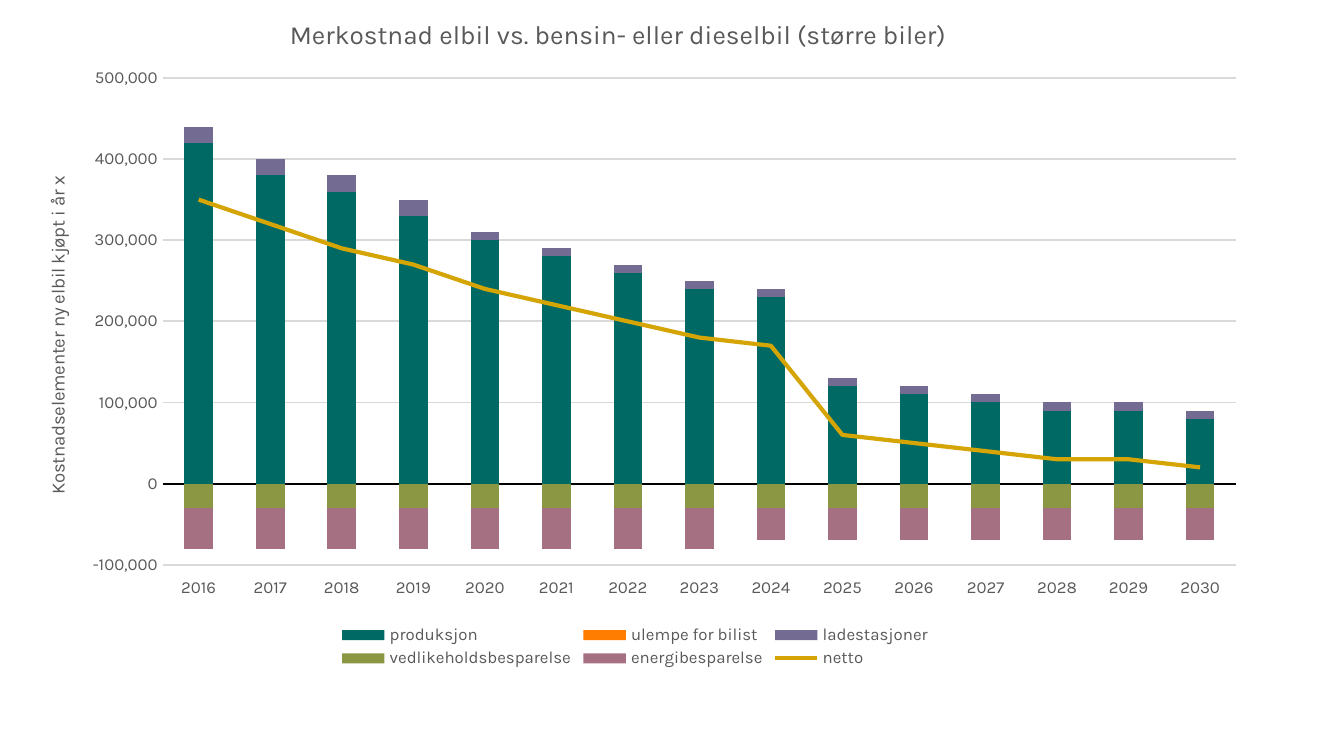
from lxml import etree
from pptx import Presentation
from pptx.chart.data import CategoryChartData
from pptx.dml.color import RGBColor
from pptx.enum.chart import XL_CHART_TYPE, XL_LEGEND_POSITION, XL_TICK_LABEL_POSITION, XL_TICK_MARK
from pptx.enum.text import MSO_ANCHOR, MSO_AUTO_SIZE, PP_ALIGN
from pptx.oxml.ns import qn
from pptx.util import Emu, Pt

EMU_PER_PX = 914400 / 134.4
FONT = "Karla"
GRAY = RGBColor(0x59, 0x59, 0x59)
BLACK = RGBColor(0x00, 0x00, 0x00)
GRID = RGBColor(0xD9, 0xD9, 0xD9)
TEAL = RGBColor(0x00, 0x69, 0x64)
ORANGE = RGBColor(0xFF, 0x7D, 0x00)
PURPLE = RGBColor(0x74, 0x6B, 0x93)
OLIVE = RGBColor(0x8B, 0x97, 0x42)
MAUVE = RGBColor(0xA5, 0x70, 0x82)
GOLD = RGBColor(0xD4, 0xA5, 0x04)

CHART_BOX = (9, 56, 1251, 618)
YEARS = [str(year) for year in range(2016, 2031)]
# Name, values in thousands, colour; the last series is the net line
SERIES = [
    ("produksjon", [420, 380, 360, 330, 300, 280, 260, 240, 230, 120, 110, 100, 90, 90, 80], TEAL),
    ("ulempe for bilist", [0] * 15, ORANGE),
    ("ladestasjoner", [20] * 4 + [10] * 11, PURPLE),
    ("vedlikeholdsbesparelse", [-30] * 15, OLIVE),
    ("energibesparelse", [-50] * 8 + [-40] * 7, MAUVE),
    ("netto", [350, 320, 290, 270, 240, 220, 200, 180, 170, 60, 50, 40, 30, 30, 20], GOLD),
]


def px(length):
    return Emu(round(length * EMU_PER_PX))


def style_font(font, size, color=GRAY):
    font.name = FONT
    font.size = Pt(size)
    font.bold = False
    font.color.rgb = color


def add_heading(page, text, left, top, width, height):
    box = page.shapes.title
    box.left, box.top, box.width, box.height = map(px, (left, top, width, height))
    frame = box.text_frame
    frame.word_wrap = False
    frame.auto_size = MSO_AUTO_SIZE.NONE
    frame.vertical_anchor = MSO_ANCHOR.MIDDLE
    para = frame.paragraphs[0]
    para.alignment = PP_ALIGN.CENTER
    span = para.add_run()
    span.text = text
    style_font(span.font, 14)


def add_child(parent, tag, value):
    return etree.SubElement(parent, qn(tag), val=str(value))


def place_part(part, index, left, top, width=None, height=None, inner=False):
    """Fix a chart part at slide pixels, as fractions of the chart."""
    for old in part.findall(qn("c:layout")):
        part.remove(old)
    layout = etree.Element(qn("c:layout"))
    manual = etree.SubElement(layout, qn("c:manualLayout"))
    if inner:
        add_child(manual, "c:layoutTarget", "inner")
    add_child(manual, "c:xMode", "edge")
    add_child(manual, "c:yMode", "edge")
    chart_left, chart_top, chart_width, chart_height = CHART_BOX
    add_child(manual, "c:x", round((left - chart_left) / chart_width, 4))
    add_child(manual, "c:y", round((top - chart_top) / chart_height, 4))
    if width:
        add_child(manual, "c:w", round(width / chart_width, 4))
        add_child(manual, "c:h", round(height / chart_height, 4))
    part.insert(index, layout)


def move_last_series_to_line(chart):
    bars = chart._chartSpace.find(".//" + qn("c:barChart"))
    series = bars.findall(qn("c:ser"))[-1]
    for invert in series.findall(qn("c:invertIfNegative")):
        series.remove(invert)
    lines = etree.Element(qn("c:lineChart"))
    add_child(lines, "c:grouping", "standard")
    add_child(lines, "c:varyColors", 0)
    lines.append(series)
    add_child(lines, "c:marker", 1)
    for axis in bars.findall(qn("c:axId")):
        add_child(lines, "c:axId", axis.get("val"))
    bars.addnext(lines)


def style_series(chart):
    bars, lines = chart.plots
    bars.gap_width = 150
    bars.overlap = 100
    bars.vary_by_categories = False
    for series, (_, _, color) in zip(bars.series, SERIES):
        series.format.fill.solid()
        series.format.fill.fore_color.rgb = color
        series.invert_if_negative = False
    net = lines.series[0]
    net.smooth = False
    net.format.line.color.rgb = SERIES[-1][2]
    net.format.line.width = Pt(2.25)
    marker = etree.Element(qn("c:marker"))
    add_child(marker, "c:symbol", "none")
    net._element.find(qn("c:spPr")).addnext(marker)


def style_axes(chart):
    years, costs = chart.category_axis, chart.value_axis
    for axis in (years, costs):
        axis.major_tick_mark = axis.minor_tick_mark = XL_TICK_MARK.NONE
        style_font(axis.tick_labels.font, 9)
    years.tick_label_position = XL_TICK_LABEL_POSITION.LOW
    years.format.line.color.rgb = BLACK
    years.format.line.width = Pt(1)
    costs.minimum_scale, costs.maximum_scale, costs.major_unit = -100000, 500000, 100000
    costs.tick_labels.number_format = "#,##0"
    costs.tick_labels.number_format_is_linked = False
    costs.format.line.fill.background()
    costs.has_major_gridlines = True
    costs.major_gridlines.format.line.color.rgb = GRID
    costs.major_gridlines.format.line.width = Pt(1)
    span = costs.axis_title.text_frame.paragraphs[0].add_run()
    span.text = "Kostnadselementer ny elbil kjøpt i år x"
    style_font(span.font, 10)


def add_cost_chart(page):
    chart_data = CategoryChartData(number_format="#,##0")
    chart_data.categories = YEARS
    for name, thousands, _ in SERIES:
        chart_data.add_series(name, [value * 1000 for value in thousands])
    chart = page.shapes.add_chart(
        XL_CHART_TYPE.COLUMN_STACKED, *map(px, CHART_BOX), chart_data).chart
    style_font(chart.font, 10, BLACK)
    chart.has_title = False
    move_last_series_to_line(chart)
    style_series(chart)
    style_axes(chart)

    # Legend in two rows below the plot
    chart.has_legend = True
    chart.legend.position = XL_LEGEND_POSITION.BOTTOM
    chart.legend.include_in_layout = False
    style_font(chart.legend.font, 9)

    place_part(chart._chartSpace.find(".//" + qn("c:plotArea")), 0, 163, 78, 1073, 487, inner=True)
    place_part(chart.value_axis.axis_title._element, 1, 42, 173)
    place_part(chart.legend._element, 1, 335, 622, 600, 50)


def main():
    deck = Presentation()
    deck.slide_width, deck.slide_height = px(1344), px(756)
    page = deck.slides.add_slide(deck.slide_layouts[5])
    add_cost_chart(page)
    add_heading(page, "Merkostnad elbil vs. bensin- eller dieselbil (større biler)", 275, 11, 687, 46)
    deck.save("out.pptx")


if __name__ == "__main__":
    main()
